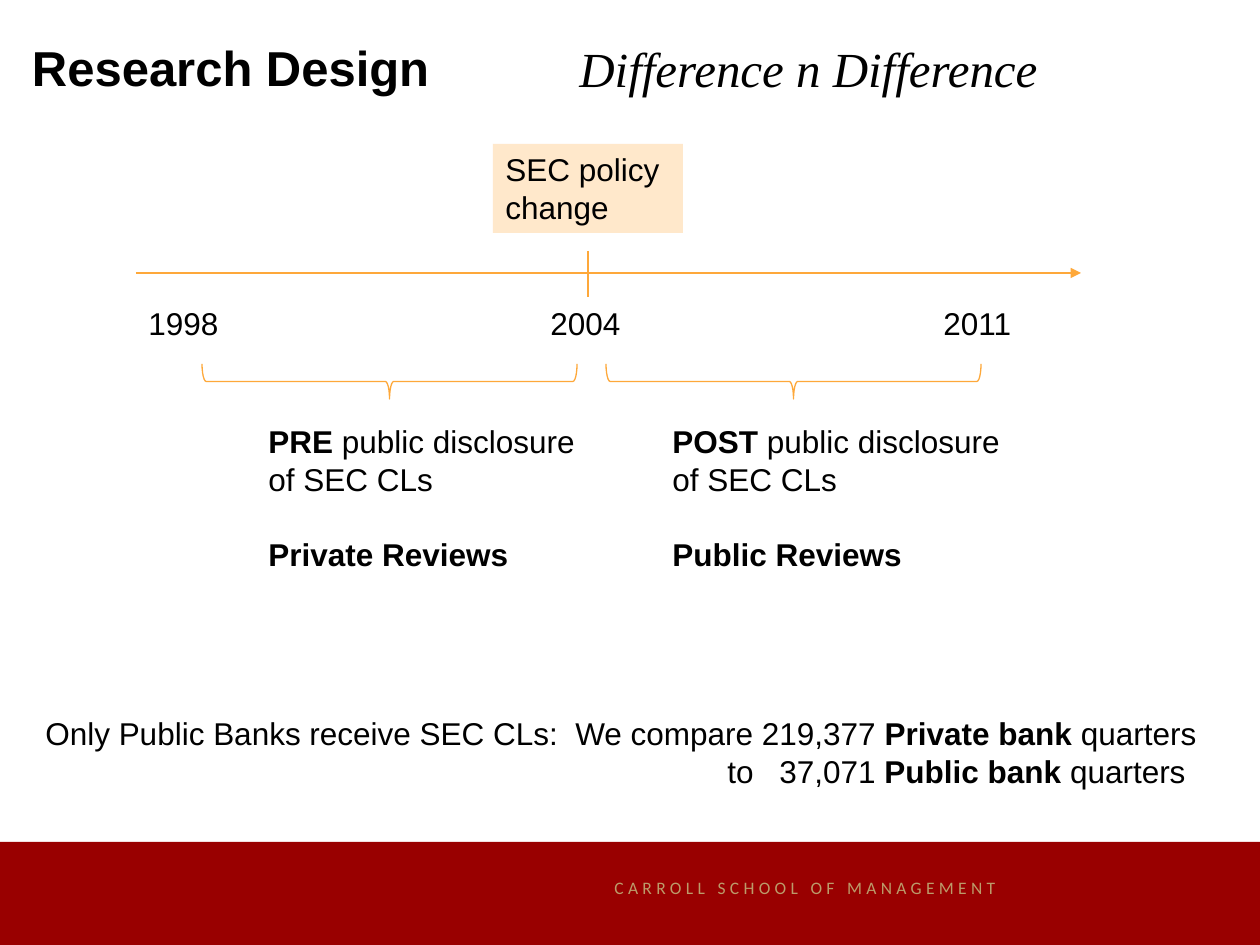
from lxml import etree
from pptx import Presentation
from pptx.dml.color import RGBColor
from pptx.enum.shapes import MSO_CONNECTOR, MSO_SHAPE
from pptx.enum.text import MSO_ANCHOR, PP_ALIGN
from pptx.oxml.ns import qn
from pptx.util import Emu, Pt

LINE = MSO_CONNECTOR.STRAIGHT
RECT = MSO_SHAPE.RECTANGLE
BRACE = MSO_SHAPE.RIGHT_BRACE
TOP = MSO_ANCHOR.TOP
LEFT = PP_ALIGN.LEFT
CENTER = PP_ALIGN.CENTER

SCALE = 914400 / 126
ORANGE = "FEA83A"
BODY = {"name": "Arial", "size": Pt(18)}
HEAD = {"name": "Arial", "size": Pt(28), "bold": True}
SUB = {"name": "Times New Roman", "size": Pt(28), "italic": True}
FOOT = {"name": "Calibri", "size": Pt(10)}


def px(num):
    """Turn pixels into EMU."""
    return Emu(round(num * SCALE))


def color(code):
    """Turn a hex string into a colour."""
    return RGBColor.from_string(code)


def node(parent, tag, **attrs):
    """Append a drawing element with its attributes."""
    return etree.SubElement(parent, qn(tag), attrs)


def write(shape, lines, fmt, ink="000000", align=LEFT, tabs=(), gaps=None):
    """Fill a shape with lines, each a list of (text, format) runs."""
    frame = shape.text_frame
    frame.word_wrap = True
    frame.vertical_anchor = TOP
    for i, runs in enumerate(lines):
        para = frame.paragraphs[0] if i == 0 else frame.add_paragraph()
        if tabs:
            stops = node(para._p.get_or_add_pPr(), "a:tabLst")
            for stop in tabs:
                node(stops, "a:tab", pos=str(px(stop)), algn="l")
        para.alignment = align
        if gaps and i in gaps:
            para.space_before = Pt(gaps[i])
        for text, extra in runs:
            run = para.add_run()
            run.text = text
            run.font.color.rgb = color(ink)
            for key, value in {**fmt, **extra}.items():
                setattr(run.font, key, value)
    return frame


def label(slide, box, lines, fmt, **opts):
    """Add a text box."""
    shape = slide.shapes.add_textbox(*map(px, box))
    return write(shape, lines, fmt, **opts)


def block(slide, box, fill, alpha=100):
    """Add a filled rectangle without outline."""
    shape = slide.shapes.add_shape(RECT, *map(px, box))
    shape.shadow.inherit = False
    shape.fill.solid()
    shape.fill.fore_color.rgb = color(fill)
    shape.line.fill.background()
    if alpha < 100:
        tint = shape.fill._xPr.find(qn("a:solidFill"))[0]
        node(tint, "a:alpha", val=str(alpha * 1000))
    return shape


def stroke(line):
    """Set the thin orange outline."""
    line.color.rgb = color(ORANGE)
    line.width = Pt(0.75)


def rule(slide, ends, arrow=False):
    """Add a straight line, with an arrowhead if asked."""
    link = slide.shapes.add_connector(LINE, *map(px, ends))
    stroke(link.line)
    if arrow:
        node(link.line._get_or_add_ln(), "a:tailEnd", type="triangle")
    node(link._element.spPr, "a:effectLst")


def brace(slide, left):
    """Add a brace turned to point down."""
    shape = slide.shapes.add_shape(BRACE, *map(px, (left, 194, 35, 375)))
    shape.shadow.inherit = False
    shape.rotation = 90
    shape.adjustments[0] = 0.12
    shape.fill.background()
    stroke(shape.line)


def footer(slide):
    """Add the red band and school name."""
    block(slide, (0, 842, 1260, 103), "990000")
    frame = label(slide, (602, 871, 445, 34),
                  [[("CARROLL SCHOOL OF MANAGEMENT", {})]], FOOT, ink="BC9B6A")
    frame.paragraphs[0].runs[0].font._element.set("spc", "250")


def main():
    """Build the slide and save it."""
    deck = Presentation()
    deck.slide_width, deck.slide_height = px(1260), px(945)
    slide = deck.slides.add_slide(deck.slide_layouts[6])
    bold = {"bold": True}

    footer(slide)
    title = label(slide, (19, 24, 500, 106), [[("Research Design", {})]], HEAD)
    for side in ("left", "top", "right", "bottom"):
        setattr(title, f"margin_{side}", px(13))
    label(slide, (357, 32, 903, 72), [[("Difference n Difference", {})]],
          SUB, align=CENTER)

    rule(slide, (136, 273, 1081, 273), arrow=True)
    rule(slide, (588, 251, 588, 297))
    label(slide, (136, 298, 903, 50), [[("1998\t2004\t2011", {})]],
          BODY, tabs=(402, 795))
    policy = block(slide, (493, 144, 190, 89), "FFAB40", 27)
    write(policy, [[("SEC policy", {})], [("change", {})]], BODY)

    spans = (("PRE", "Private Reviews"), ("POST", "Public Reviews"))
    for i, (phase, kind) in enumerate(spans):
        shift = 404 * i
        brace(slide, 372 + shift)
        label(slide, (256 + shift, 416, 360, 165),
              [[(phase, bold), (" public disclosure", {})],
               [("of SEC CLs", {})], [(kind, bold)]],
              BODY, gaps={2: 21.5})

    label(slide, (33, 708, 1197, 89),
          [[("Only Public Banks receive SEC CLs:\tWe compare 219,377 ", {}),
            ("Private bank", bold), (" quarters", {})],
           [("\tto\t37,071 ", {}), ("Public bank ", bold), ("quarters", {})]],
          BODY)
    notes = slide.shapes[-1].text_frame.paragraphs
    for para, stops in zip(notes, ((530,), (682, 734))):
        tabs = node(para._p.get_or_add_pPr(), "a:tabLst")
        for stop in stops:
            node(tabs, "a:tab", pos=str(px(stop)), algn="l")

    deck.save("out.pptx")


if __name__ == "__main__":
    main()
